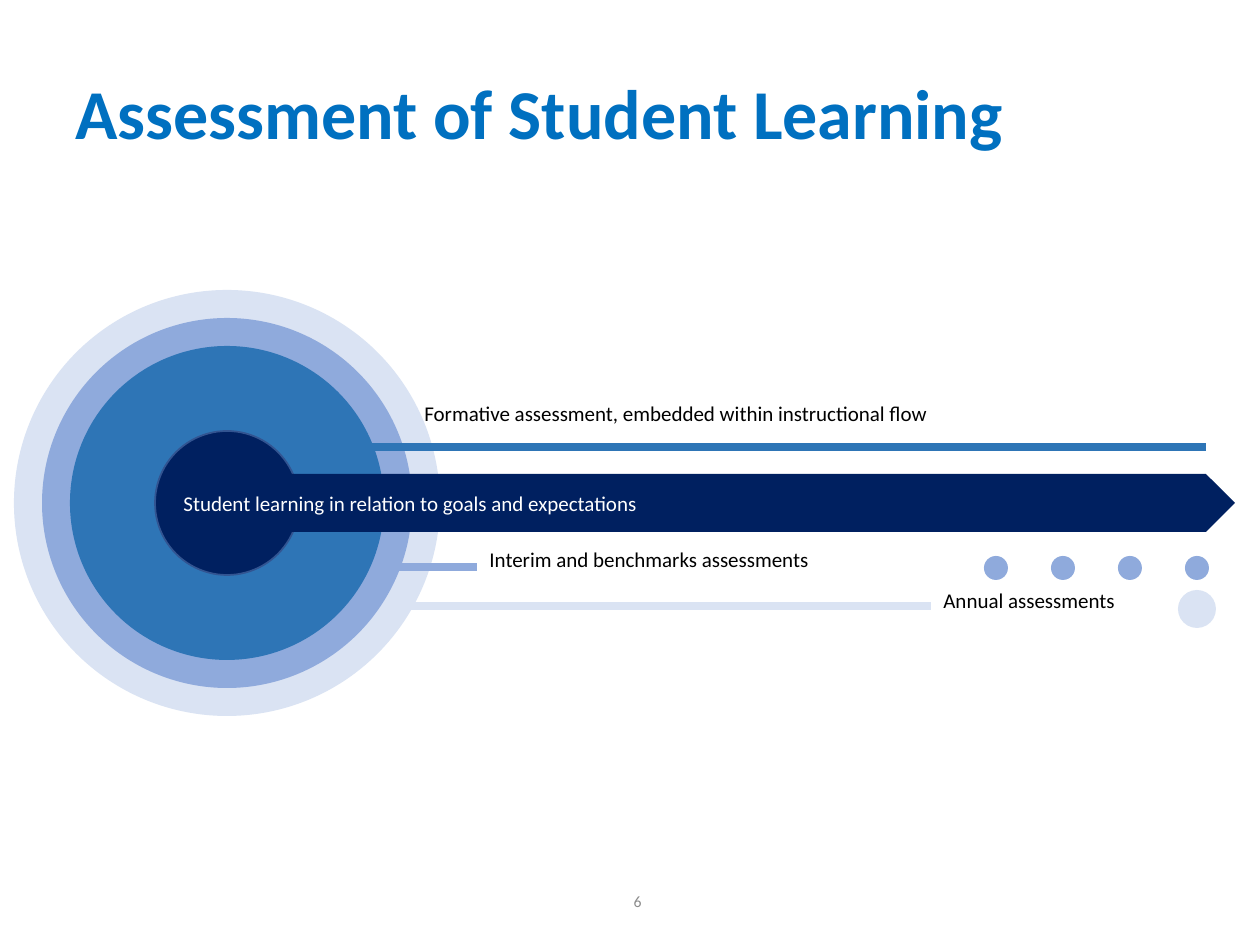
from lxml import etree
from pptx import Presentation
from pptx.dml.color import RGBColor
from pptx.enum.shapes import MSO_CONNECTOR, MSO_SHAPE
from pptx.enum.text import MSO_ANCHOR, PP_ALIGN
from pptx.oxml.ns import qn
from pptx.util import Emu, Pt

OVAL = MSO_SHAPE.OVAL
PENTAGON = MSO_SHAPE.PENTAGON
STRAIGHT = MSO_CONNECTOR.STRAIGHT
TOP, MIDDLE = MSO_ANCHOR.TOP, MSO_ANCHOR.MIDDLE
LEFT, RIGHT = PP_ALIGN.LEFT, PP_ALIGN.RIGHT

EMU_PER_INCH = 914400
PX_PER_INCH = 126
FONT = "Calibri"
PALE, LIGHT, MID, NAVY = "DAE3F3", "8FAADC", "2E75B6", "002060"
RING_CENTER = (227, 503)
DOT_START, DOT_STEP, DOT_Y, DOT_RADIUS = 996, 67, 568, 12


def px(length):
    return Emu(round(length * EMU_PER_INCH / PX_PER_INCH))


def color(value):
    return RGBColor.from_string(value)


def write(frame, text, size, ink, bold=False, align=LEFT, anchor=TOP, wrap=True):
    frame.word_wrap = wrap
    frame.vertical_anchor = anchor
    paragraph = frame.paragraphs[0]
    paragraph.alignment = align
    run = paragraph.add_run()
    run.text = text
    run.font.name = FONT
    run.font.size = Pt(size)
    run.font.bold = bold
    run.font.color.rgb = color(ink)
    return paragraph


def add_label(slide, box, text, size=12, ink="000000", **style):
    label = slide.shapes.add_textbox(*map(px, box))
    return write(label.text_frame, text, size, ink, **style)


def add_solid(slide, preset, box, fill):
    solid = slide.shapes.add_shape(preset, *map(px, box))
    solid.shadow.inherit = False
    solid.fill.solid()
    solid.fill.fore_color.rgb = color(fill)
    solid.line.fill.background()
    return solid


def add_disc(slide, center, radius, fill):
    x, y = center
    box = (x - radius, y - radius, 2 * radius, 2 * radius)
    return add_solid(slide, OVAL, box, fill)


def add_bar(slide, start, end, y, ink):
    bar = slide.shapes.add_connector(STRAIGHT, px(start), px(y), px(end), px(y))
    bar.line.color.rgb = color(ink)
    bar.line.width = Pt(4.75)
    etree.SubElement(bar._element.spPr, qn("a:effectLst"))


def add_rings(slide):
    for radius, fill in ((213, PALE), (185, LIGHT), (157, MID)):
        add_disc(slide, RING_CENTER, radius, fill)
    core = add_disc(slide, RING_CENTER, 72, NAVY)
    core.line.color.rgb = color("325491")
    core.line.width = Pt(1)


def add_goal_arrow(slide):
    arrow = add_solid(slide, PENTAGON, (171, 474, 1064, 58), NAVY)
    write(arrow.text_frame, "Student learning in relation to goals and expectations",
          12, "FFFFFF", anchor=MIDDLE)


def add_assessments(slide):
    add_bar(slide, 364, 1206, 447, MID)
    add_label(slide, (412, 394, 833, 55),
              "Formative assessment, embedded within instructional flow")
    add_label(slide, (477, 540, 512, 55), "Interim and benchmarks assessments", wrap=False)
    add_label(slide, (931, 581, 257, 48), "Annual assessments")
    for step in range(4):
        add_disc(slide, (DOT_START + step * DOT_STEP, DOT_Y), DOT_RADIUS, LIGHT)
    add_bar(slide, 384, 477, 567, LIGHT)
    add_bar(slide, 394, 931, 606, PALE)


def main():
    presentation = Presentation()
    presentation.slide_width = px(1260)
    presentation.slide_height = px(945)
    slide = presentation.slides.add_slide(presentation.slide_layouts[6])
    add_label(slide, (370, 876, 284, 50), "6", 9, "8C8C8C", align=RIGHT, anchor=MIDDLE)
    title = add_label(slide, (63, 38, 1134, 157), "Assessment of Student Learning",
                      40, "0070C0", bold=True, anchor=MIDDLE)
    title.line_spacing = 0.9
    add_disc(slide, (1197, 609), 19, PALE)
    add_rings(slide)
    add_goal_arrow(slide)
    add_assessments(slide)
    presentation.save("out.pptx")


if __name__ == "__main__":
    main()
